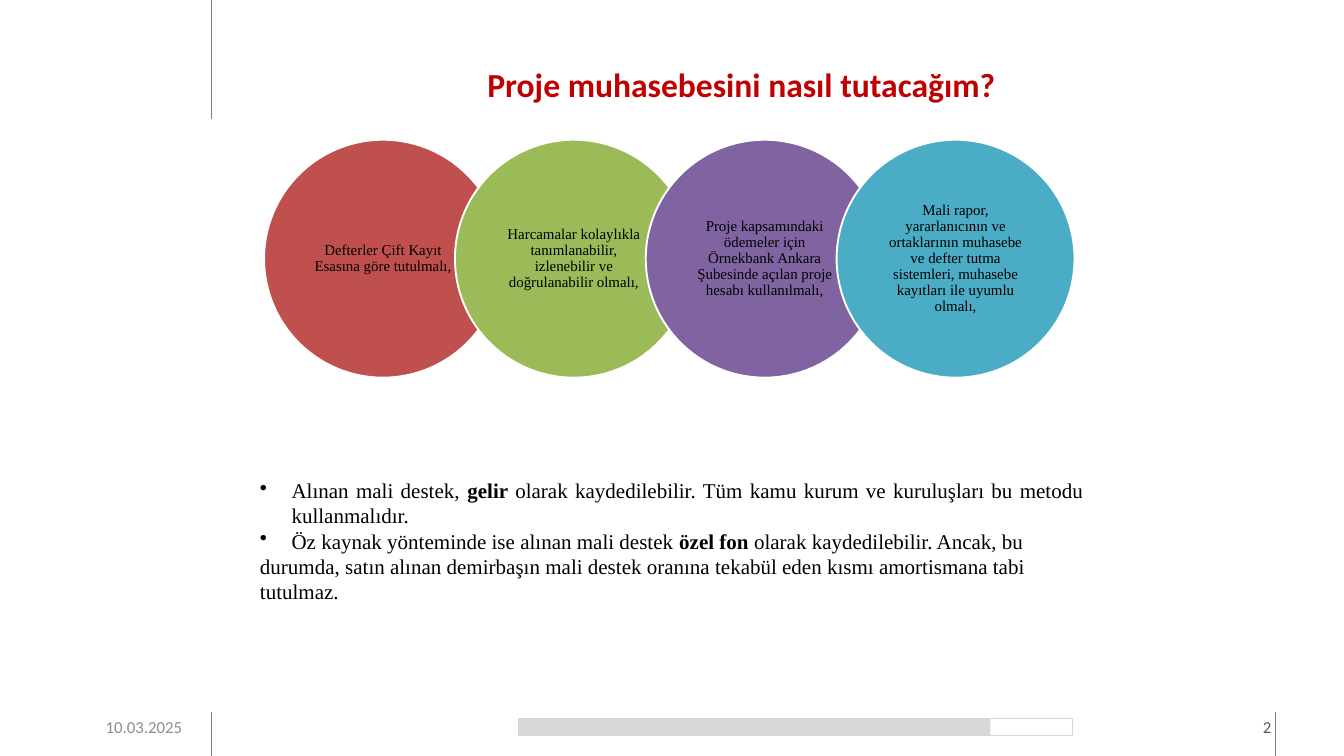
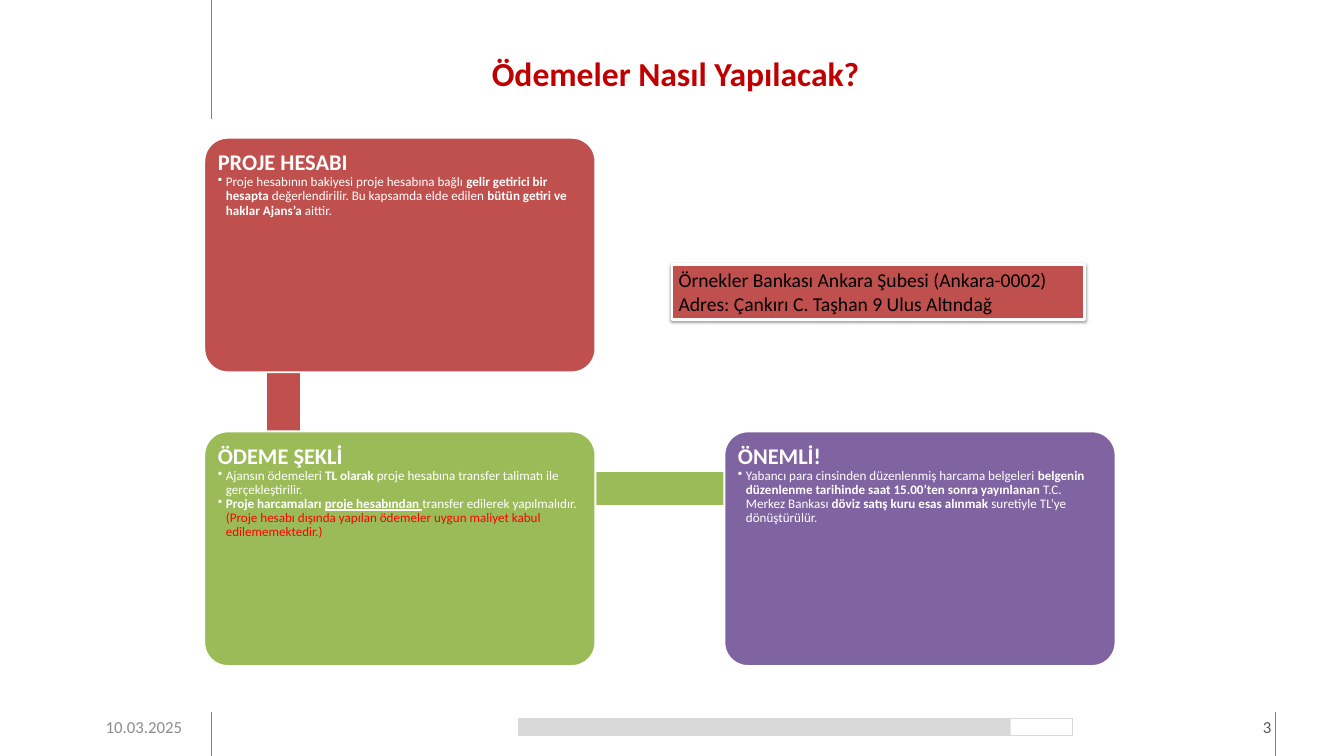
from dataclasses import dataclass

from lxml import etree
from pptx import Presentation
from pptx.dml.color import RGBColor
from pptx.enum.shapes import MSO_CONNECTOR, MSO_SHAPE
from pptx.enum.text import MSO_ANCHOR, PP_ALIGN
from pptx.oxml.ns import qn
from pptx.util import Inches, Pt

LEFT, CENTER, RIGHT, JUSTIFY = PP_ALIGN.LEFT, PP_ALIGN.CENTER, PP_ALIGN.RIGHT, PP_ALIGN.JUSTIFY
TOP, MIDDLE = MSO_ANCHOR.TOP, MSO_ANCHOR.MIDDLE
RECT, OVAL, ROUNDED = MSO_SHAPE.RECTANGLE, MSO_SHAPE.OVAL, MSO_SHAPE.ROUNDED_RECTANGLE
STRAIGHT = MSO_CONNECTOR.STRAIGHT


@dataclass(frozen=True)
class Theme:
    sans: str = "Calibri"
    serif: str = "Times New Roman"
    title_color: str = "C00000"
    red: str = "C0504D"
    green: str = "9BBB59"
    purple: str = "8064A2"
    teal: str = "4BACC6"
    warning: str = "FF0000"
    white: str = "FFFFFF"
    black: str = "000000"
    rule: str = "808080"
    bar: str = "D8D8D8"
    date_color: str = "8C8C8C"
    number_color: str = "595959"
    title_size: float = 36
    heading_size: float = 24
    body_size: float = 22.5
    address_size: float = 21
    footer_size: float = 18
    circle_size: float = 16
    card_size: float = 14


T = Theme()
DEFAULT_INSETS = (0.1, 0.05, 0.1, 0.05)
BOLD = {"bold": True}


class Deck:
    """Holds the presentation and the slide being built."""

    def __init__(self):
        self.prs = Presentation()
        self.prs.slide_width, self.prs.slide_height = Inches(20), Inches(11.25)
        self.s = None

    def new_slide(self, number, title, title_at, progress):
        self.s = self.prs.slides.add_slide(self.prs.slide_layouts[6])
        # Margin rules
        self.line(3.15, 0, 1.77)
        for x in (18.98, 3.15):
            self.line(x, 10.59, 11.25)
        # Footer and title
        self.footer(0.48, 2.33, "10.03.2025", T.date_color)
        self.footer(18.19, 0.79, str(number), T.number_color, (0.06,) * 4)
        tf = self.text_box(*title_at, 11.69, 0.87)
        self.paragraph(tf, [(title, BOLD)], T.sans, T.title_size, T.title_color, CENTER)
        # Progress bar
        self.shape(RECT, 7.71, 10.69, 8.25, 0.25, T.white, T.bar, 0.75)
        self.shape(RECT, 7.71, 10.69, progress, 0.25, T.bar)

    def line(self, x, top, bottom):
        ln = self.s.shapes.add_connector(STRAIGHT, Inches(x), Inches(top), Inches(x), Inches(bottom))
        ln.line.color.rgb = RGBColor.from_string(T.rule)
        ln.line.width = Pt(0.75)
        etree.SubElement(ln._element.spPr, qn("a:effectLst"))

    def footer(self, x, w, text, color, insets=DEFAULT_INSETS):
        tf = self.text_box(x, 10.59, w, 0.44, MIDDLE, insets)
        self.paragraph(tf, [(text, {})], T.sans, T.footer_size, color, RIGHT)

    def text_box(self, x, y, w, h, anchor=TOP, insets=DEFAULT_INSETS):
        sp = self.s.shapes.add_textbox(Inches(x), Inches(y), Inches(w), Inches(h))
        return self.frame(sp, anchor, insets)

    def shape(self, kind, x, y, w, h, fill, line=None, width=2):
        sp = self.s.shapes.add_shape(kind, Inches(x), Inches(y), Inches(w), Inches(h))
        sp.shadow.inherit = False
        sp.fill.solid()
        sp.fill.fore_color.rgb = RGBColor.from_string(fill)
        if line:
            sp.line.color.rgb = RGBColor.from_string(line)
            sp.line.width = Pt(width)
        else:
            sp.line.fill.background()
        return sp

    def frame(self, sp, anchor=TOP, insets=DEFAULT_INSETS):
        tf = sp.text_frame
        tf.word_wrap = True
        tf.vertical_anchor = anchor
        tf.margin_left, tf.margin_top, tf.margin_right, tf.margin_bottom = map(Inches, insets)
        return tf

    def paragraph(self, tf, runs, font, size, color, align=LEFT, bullet=0, spacing=None, after=0):
        """Fill the first empty paragraph or add one; bullet is the hanging indent."""
        p = tf.paragraphs[0]
        if p.runs:
            p = tf.add_paragraph()
        if bullet:
            pPr = p._p.get_or_add_pPr()
            pPr.set("marL", str(Inches(bullet)))
            pPr.set("indent", str(-Inches(bullet)))
            etree.SubElement(pPr, qn("a:buChar"), char="•")
        p.alignment = align
        p.line_spacing = spacing
        p.space_after = Pt(after)
        for text, style in runs:
            r = p.add_run()
            r.text = text
            r.font.name, r.font.size = font, Pt(size)
            r.font.bold = style.get("bold", False)
            r.font.underline = style.get("underline", False)
            r.font.color.rgb = RGBColor.from_string(style.get("color", color))

    def circle(self, x, text, fill):
        sp = self.shape(OVAL, x, 2.08, 3.54, 3.54, fill, T.white)
        tf = self.frame(sp, MIDDLE, (0.2, 0.02, 0.2, 0.02))
        self.paragraph(tf, [(text, {})], T.serif, T.circle_size, T.black, CENTER, spacing=0.9, after=6.7)

    def card(self, x, y, fill, heading, bullets):
        sp = self.shape(ROUNDED, x, y, 5.82, 3.49, fill, T.white)
        sp.adjustments[0] = 0.1
        tf = self.frame(sp, TOP, (0.1,) * 4)
        self.paragraph(tf, [(heading, BOLD)], T.sans, T.heading_size, T.white, spacing=0.9)
        for runs in bullets:
            self.paragraph(tf, runs, T.sans, T.card_size, T.white, bullet=0.12, spacing=0.9)

    def drop_shadow(self, sp):
        effects = sp._element.spPr.find(qn("a:effectLst"))
        shadow = etree.SubElement(effects, qn("a:outerShdw"), blurRad=str(Pt(3.1)), dist=str(Pt(1.6)),
                                  dir="5400000", rotWithShape="0")
        color = etree.SubElement(shadow, qn("a:srgbClr"), val=T.black)
        etree.SubElement(color, qn("a:alpha"), val="38000")


def accounting_slide(deck):
    deck.new_slide(2, "Proje muhasebesini nasıl tutacağım?", (5.19, 0.9), 7.03)

    # Overlapping circles
    rules = [
        ("Defterler Çift Kayıt Esasına göre tutulmalı,", T.red),
        ("Harcamalar kolaylıkla tanımlanabilir, izlenebilir ve doğrulanabilir olmalı,", T.green),
        ("Proje kapsamındaki ödemeler için Örnekbank Ankara Şubesinde açılan proje hesabı "
         "kullanılmalı,", T.purple),
        ("Mali rapor, yararlanıcının ve ortaklarının muhasebe ve defter tutma sistemleri, "
         "muhasebe kayıtları ile uyumlu olmalı,", T.teal),
    ]
    for i, (text, fill) in enumerate(rules):
        deck.circle(3.93 + 2.84 * i, text, fill)

    # Recording methods
    methods = [
        (0.47, [("Alınan mali destek, ", {}), ("gelir ", BOLD),
                ("olarak kaydedilebilir. Tüm kamu kurum ve kuruluşları bu metodu kullanmalıdır.", {})]),
        (0.47, [("Öz kaynak yönteminde ise alınan mali destek ", {}), ("özel fon ", BOLD),
                ("olarak kaydedilebilir. Ancak, bu", {})]),
        (0, [("durumda, satın alınan demirbaşın mali destek oranına tekabül eden kısmı "
              "amortismana tabi", {})]),
        (0, [("tutulmaz.", {})]),
    ]
    tf = deck.text_box(3.77, 7.06, 12.46, 1.99)
    for bullet, runs in methods:
        deck.paragraph(tf, runs, T.serif, T.body_size, T.black, JUSTIFY, bullet)


def payments_slide(deck):
    deck.new_slide(3, "Ödemeler Nasıl Yapılacak?", (4.21, 0.74), 7.33)

    # Bars that link the cards
    deck.shape(RECT, 2.04, 4.82, 4.35, 0.52, T.red, T.white).rotation = 90
    deck.shape(RECT, 4.22, 7.01, 7.73, 0.52, T.green, T.white)

    # Cards
    left, right, upper, lower = 3.04, 10.78, 2.05, 6.42
    deck.card(left, upper, T.red, "PROJE HESABI", [
        [("Proje hesabının bakiyesi proje hesabına bağlı ", {}), ("gelir getirici bir hesapta", BOLD),
         (" değerlendirilir. Bu kapsamda elde edilen ", {}),
         ("bütün getiri ve haklar Ajans’a ", BOLD), ("aittir.", {})],
    ])
    deck.card(left, lower, T.green, "ÖDEME ŞEKLİ", [
        [("Ajansın ödemeleri ", {}), ("TL olarak ", BOLD),
         ("proje hesabına transfer talimatı ile gerçekleştirilir.", {})],
        [("Proje harcamaları ", BOLD), ("proje hesabından ", {"bold": True, "underline": True}),
         ("transfer edilerek yapılmalıdır. ", {}),
         ("(Proje hesabı dışında yapılan ödemeler uygun maliyet kabul edilememektedir.)",
          {"color": T.warning})],
    ])
    deck.card(right, lower, T.purple, "ÖNEMLİ!", [
        [("Yabancı para cinsinden düzenlenmiş harcama belgeleri ", {}),
         ("belgenin düzenlenme tarihinde saat 15.00’ten sonra yayınlanan", BOLD),
         (" T.C. Merkez Bankası ", {}), ("döviz satış kuru esas alınmak ", BOLD),
         ("suretiyle TL’ye dönüştürülür.", {})],
    ])

    # Branch address
    sp = deck.shape(RECT, 10, 3.94, 6.14, 0.81, T.red, T.white, 3)
    deck.drop_shadow(sp)
    tf = deck.frame(sp)
    for text in ("Örnekler Bankası Ankara Şubesi (Ankara-0002)", "Adres: Çankırı C. Taşhan 9 Ulus Altındağ"):
        deck.paragraph(tf, [(text, {})], T.sans, T.address_size, T.black, JUSTIFY)


def main():
    deck = Deck()
    accounting_slide(deck)
    payments_slide(deck)
    deck.prs.save("out.pptx")


if __name__ == "__main__":
    main()
